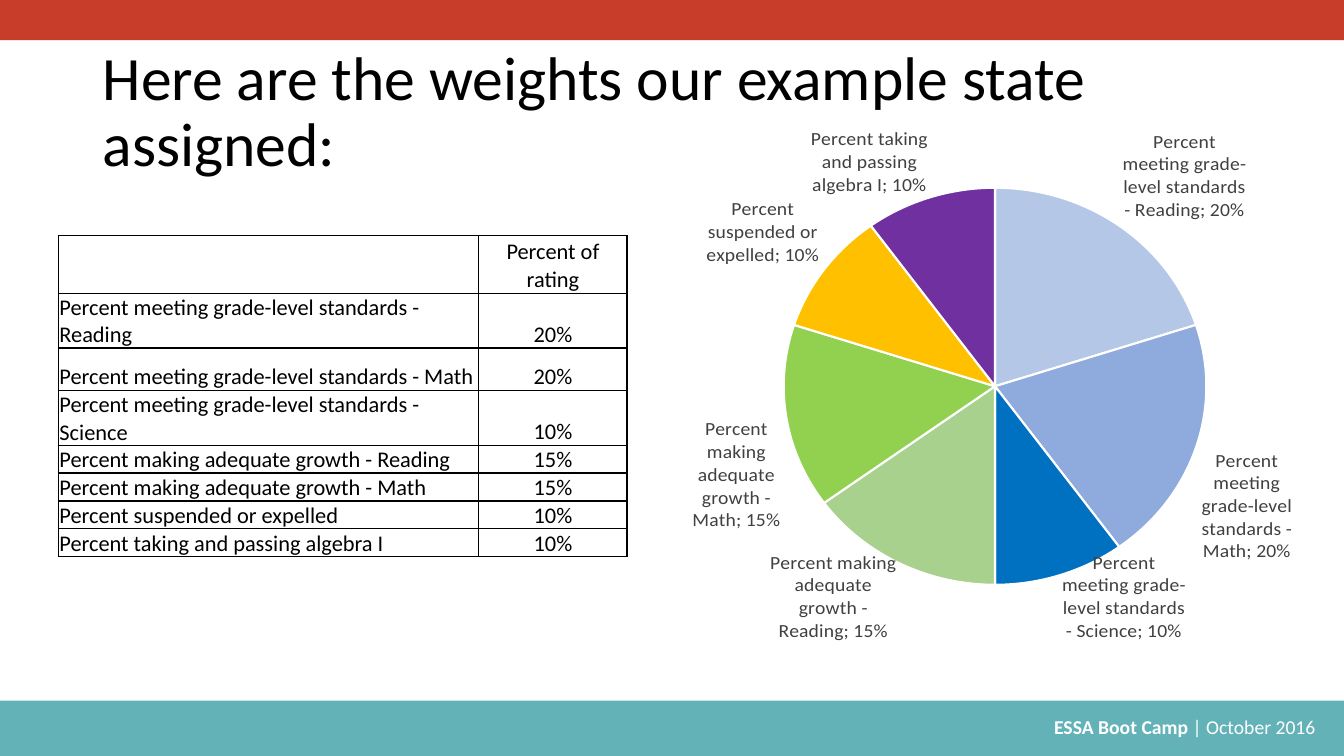
"""Build a slide that shows rating weights as a table and a pie chart."""
from lxml import etree
from pptx import Presentation, util as u
from pptx.chart.data import CategoryChartData
from pptx.dml.color import RGBColor
from pptx.enum import chart as charts, shapes, text
from pptx.oxml import parse_xml
from pptx.oxml.ns import nsdecls, qn

WIDTH, HEIGHT = 13.33, 7.5
FONT = "Calibri"
TITLE = "Here are the weights our example state assigned:"
FOOTER = [("ESSA Boot Camp ", True), ("| October 2016 ", False)]
HEADER = ("", "Percent of rating")
WEIGHTS = [
    ("Percent meeting grade-level standards - Reading", 0.2, "B4C7E7"),
    ("Percent meeting grade-level standards - Math", 0.2, "8FAADC"),
    ("Percent meeting grade-level standards - Science", 0.1, "0070C0"),
    ("Percent making adequate growth - Reading", 0.15, "A9D18E"),
    ("Percent making adequate growth - Math", 0.15, "92D050"),
    ("Percent suspended or expelled", 0.1, "FFC000"),
    ("Percent taking and passing algebra I", 0.1, "7030A0"),
]
BANDS = [(6.95, 0.55, "63B2B8"), (0, 0.4, "C83C2A")]
COLUMNS = (4.17, 1.47)
ROWS = (0.57,) + (0.42,) * 3 + (0.21,) * 4
PLOT = {"x": 0.192, "y": 0.116, "w": 0.637, "h": 0.773}


def color(value):
    return RGBColor.from_string(value)


def box(left, top, width, height):
    return [u.Inches(length) for length in (left, top, width, height)]


def style(font, size, value):
    font.name, font.size = FONT, u.Pt(size)
    font.color.rgb = color(value)


def add_band(slide, top, height, value):
    band = slide.shapes.add_shape(shapes.MSO_SHAPE.RECTANGLE, *box(0, top, WIDTH, height))
    band.shadow.inherit = False
    band.fill.solid()
    band.fill.fore_color.rgb = color(value)
    band.line.fill.background()


def add_text(slide, place, runs, size, value, align, anchor):
    frame = slide.shapes.add_textbox(*box(*place)).text_frame
    frame.word_wrap = True
    frame.vertical_anchor = anchor
    paragraph = frame.paragraphs[0]
    paragraph.alignment = align
    style(paragraph.font, size, value)
    for words, bold in runs:
        run = paragraph.add_run()
        run.text, run.font.bold = words, bold
    return paragraph


def fill_cell(cell, words, align):
    cell.text = words
    cell.fill.background()
    cell.vertical_anchor = text.MSO_ANCHOR.BOTTOM
    cell.margin_left = cell.margin_right = cell.margin_top = u.Inches(0.01)
    cell.margin_bottom = 0
    paragraph = cell.text_frame.paragraphs[0]
    paragraph.alignment = align
    style(paragraph.font, 16, "000000")
    properties = cell._tc.get_or_add_tcPr()
    for index, side in enumerate(("lnL", "lnR", "lnT", "lnB")):
        properties.insert(index, parse_xml(
            f'<a:{side} {nsdecls("a")} w="12700"><a:solidFill>'
            f'<a:srgbClr val="000000"/></a:solidFill></a:{side}>'))


def add_weights_table(slide):
    place = box(0.58, 2.34, sum(COLUMNS), sum(ROWS))
    table = slide.shapes.add_table(len(ROWS), len(COLUMNS), *place).table
    table.first_row = table.horz_banding = False
    for column, width in zip(table.columns, COLUMNS):
        column.width = u.Inches(width)
    lines = [HEADER] + [(name, f"{weight:.0%}") for name, weight, _ in WEIGHTS]
    aligns = (text.PP_ALIGN.LEFT, text.PP_ALIGN.CENTER)
    for row, height, line in zip(table.rows, ROWS, lines):
        row.height = u.Inches(height)
        for cell, words, align in zip(row.cells, line, aligns):
            fill_cell(cell, words, align)


def set_plot_layout(chart):
    plot_area = chart._chartSpace.chart.plotArea
    for old in plot_area.findall(qn("c:layout")):
        plot_area.remove(old)
    layout = etree.Element(qn("c:layout"))
    manual = etree.SubElement(layout, qn("c:manualLayout"))
    settings = {"layoutTarget": "inner", "xMode": "edge", "yMode": "edge", **PLOT}
    for name, value in settings.items():
        etree.SubElement(manual, qn(f"c:{name}")).set("val", str(value))
    plot_area.insert(0, layout)


def add_weights_pie(slide):
    data = CategoryChartData(number_format="0%")
    data.categories = [name for name, _, _ in WEIGHTS]
    data.add_series("Series 1", [weight for _, weight, _ in WEIGHTS])
    chart = slide.shapes.add_chart(
        charts.XL_CHART_TYPE.PIE, *box(6.51, 1.23, 6.58, 5.43), data).chart
    chart.has_legend = chart.has_title = False
    style(chart.font, 10, "000000")
    plot = chart.plots[0]
    plot.vary_by_categories = True
    series = plot.series[0]
    for index, (_, _, value) in enumerate(WEIGHTS):
        slice_format = series.points[index].format
        slice_format.fill.solid()
        slice_format.fill.fore_color.rgb = color(value)
        slice_format.line.color.rgb = color("FFFFFF")
        slice_format.line.width = u.Pt(1.5)
    labels = series.data_labels
    labels.show_value = labels.show_category_name = True
    labels.show_percentage = labels.show_legend_key = False
    labels.number_format, labels.number_format_is_linked = "0%", False
    labels.position = charts.XL_LABEL_POSITION.OUTSIDE_END
    style(labels.font, 14, "404040")
    set_plot_layout(chart)


def main():
    presentation = Presentation()
    presentation.slide_width, presentation.slide_height = u.Inches(WIDTH), u.Inches(HEIGHT)
    slide = presentation.slides.add_slide(presentation.slide_layouts[6])
    for band in BANDS:
        add_band(slide, *band)
    add_text(slide, (4.8, 7.04, 8.39, 0.34), FOOTER, 14, "FFFFFF",
             text.PP_ALIGN.RIGHT, text.MSO_ANCHOR.TOP)
    title = add_text(slide, (0.92, 0.4, 11.5, 1.45), [(TITLE, False)], 44, "000000",
                     text.PP_ALIGN.LEFT, text.MSO_ANCHOR.MIDDLE)
    title.line_spacing = 0.9
    add_weights_table(slide)
    add_weights_pie(slide)
    presentation.save("out.pptx")


if __name__ == "__main__":
    main()
